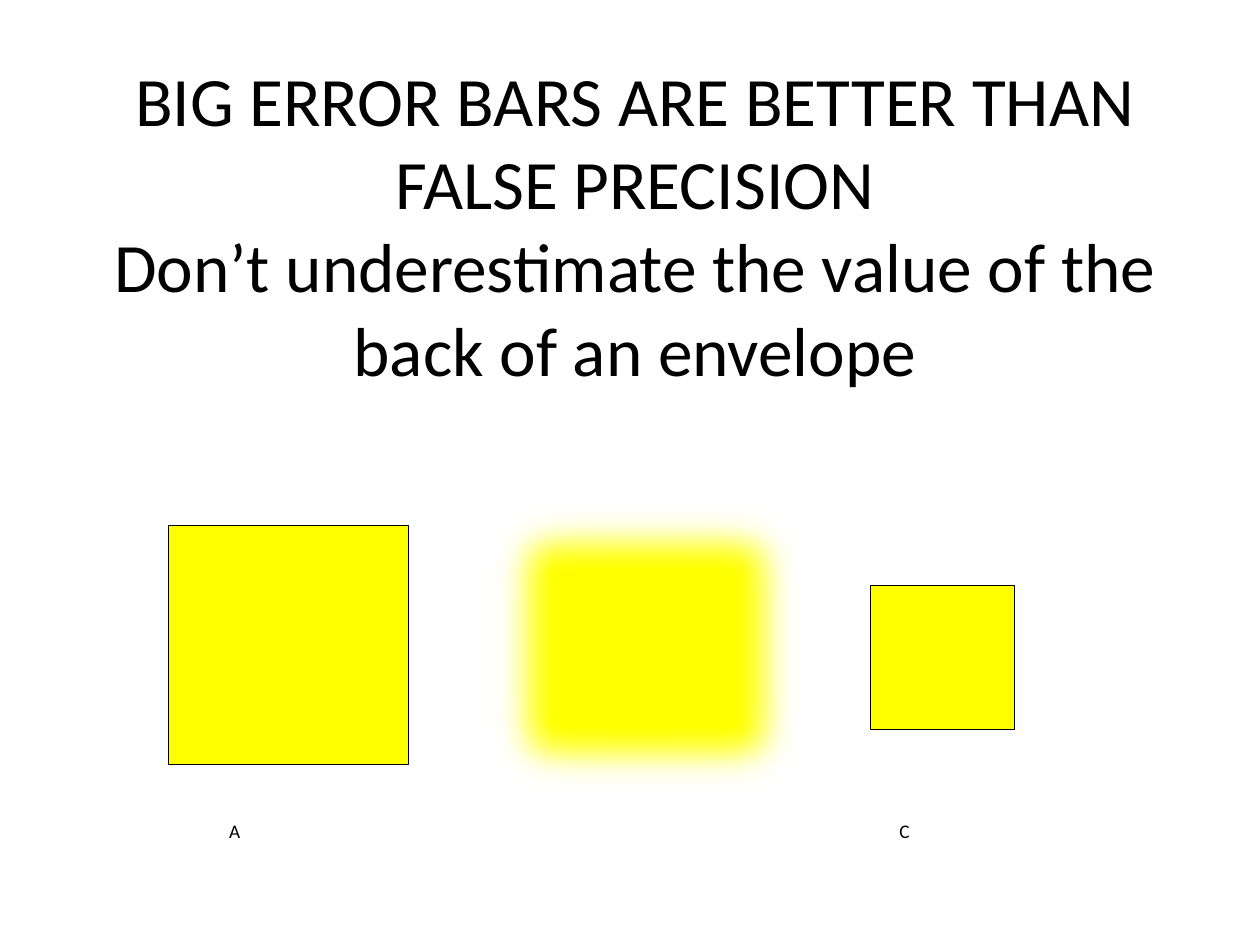
from dataclasses import dataclass

from lxml import etree
from pptx import Presentation
from pptx import util as u
from pptx.dml.color import RGBColor
from pptx.enum import shapes, text
from pptx.oxml.ns import qn


@dataclass(frozen=True)
class Theme:
    """Colours, font and type sizes in points."""
    black: str = "000000"
    white: str = "FFFFFF"
    yellow: str = "FFFF00"
    font: str = "Calibri"
    title: float = 39.6
    label: float = 11
    thin: float = 0.75
    thick: float = 6
    soft: float = 25


class Deck:
    """Draws elements on a slide measured in 100 columns by 75 rows."""

    def __init__(self, prs, theme):
        self.prs, self.theme = prs, theme
        self.s = prs.slides.add_slide(prs.slide_layouts[6])

    def box(self, col, row, cols, rows):
        """Turn grid cells into slide lengths."""
        w, h = self.prs.slide_width / 100, self.prs.slide_height / 75
        return [round(v) for v in (col * w, row * h, cols * w, rows * h)]

    def set_text(self, sp, content, size, align, anchor, after=0):
        """Set one paragraph of text in a shape."""
        tf = sp.text_frame
        frame = {"word_wrap": True, "vertical_anchor": anchor}
        for key, value in frame.items():
            setattr(tf, key, value)
        p = tf.paragraphs[0]
        p.text = content
        p.alignment, p.space_after = align, u.Pt(after)
        for r in p.runs:
            for key, value in {"name": self.theme.font, "size": u.Pt(size)}.items():
                setattr(r.font, key, value)
            r.font.color.rgb = RGBColor.from_string(self.theme.black)

    def title(self, content, *cells):
        """Add the centred heading."""
        sp = self.s.shapes.add_textbox(*self.box(*cells))
        self.set_text(sp, content, self.theme.title, text.PP_ALIGN.CENTER,
                      text.MSO_ANCHOR.MIDDLE)

    def rect(self, cells, fill, line=None, width=0):
        """Add a filled rectangle with an optional outline."""
        sp = self.s.shapes.add_shape(shapes.MSO_SHAPE.RECTANGLE, *self.box(*cells))
        sp.shadow.inherit = False
        sp.fill.solid()
        sp.fill.fore_color.rgb = RGBColor.from_string(fill)
        if line:
            sp.line.color.rgb = RGBColor.from_string(line)
            sp.line.width = u.Pt(width)
        else:
            sp.line.fill.background()
        return sp

    def sharp_square(self, col, row, side):
        """Add a square with a crisp outline."""
        t = self.theme
        self.rect((col, row, side, side), t.yellow, t.black, t.thin)

    def blurred_box(self, *cells):
        """Add a rectangle with soft edges."""
        t = self.theme
        sp = self.rect(cells, t.yellow, t.yellow, t.thick)
        effects = sp._element.spPr.find(qn("a:effectLst"))
        etree.SubElement(effects, qn("a:softEdge"), rad=str(int(u.Pt(t.soft))))

    def label(self, content, col, row):
        """Add a caption on a white rectangle."""
        sp = self.rect((col, row, 11.4, 7.6), self.theme.white)
        self.set_text(sp, content, self.theme.label, text.PP_ALIGN.LEFT,
                      text.MSO_ANCHOR.TOP, after=10)


def main():
    """Build and save the slide."""
    prs = Presentation()
    prs.slide_width, prs.slide_height = u.Inches(10), u.Inches(7.5)
    deck = Deck(prs, Theme())
    deck.title("BIG ERROR BARS ARE BETTER THAN FALSE PRECISION\v"
               "Don’t underestimate the value of the back of an envelope",
               5.4, 11.5, 90, 12.5)
    deck.sharp_square(13.4, 41.7, 19)
    deck.blurred_box(37.9, 39.1, 26.7, 24.7)
    deck.sharp_square(69.1, 46.5, 11.4)
    for content, col in (("A", 17.2), ("C", 70.4)):
        deck.label(content, col, 64.5)
    prs.save("out.pptx")


if __name__ == "__main__":
    main()
